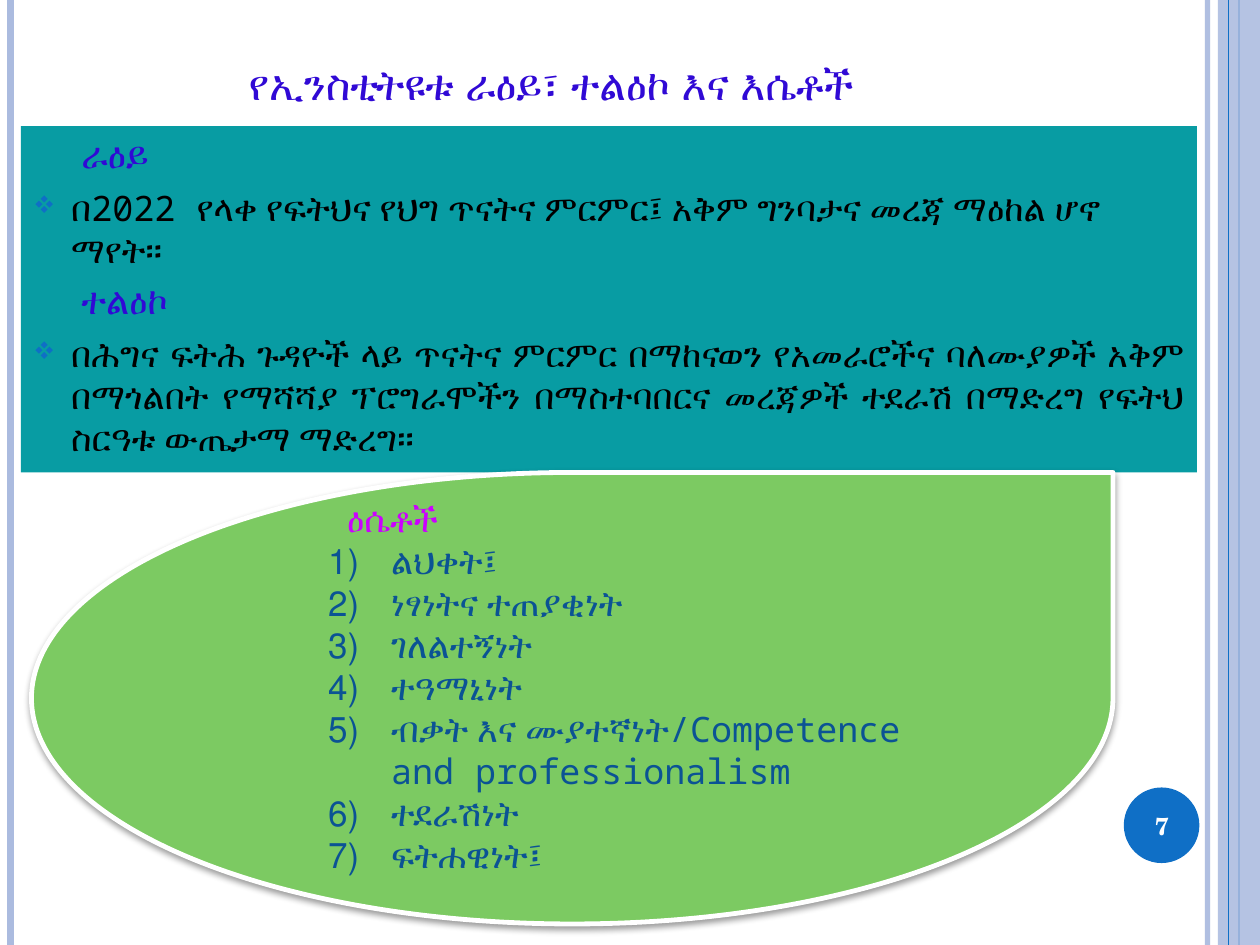
from lxml import etree
from pptx import Presentation
from pptx.dml.color import RGBColor
from pptx.enum.shapes import MSO_CONNECTOR, MSO_SHAPE
from pptx.enum.text import MSO_ANCHOR, PP_ALIGN
from pptx.oxml.ns import qn
from pptx.util import Pt

WIDTH, HEIGHT = 720, 540
STRAIGHT = MSO_CONNECTOR.STRAIGHT
RECTANGLE, OVAL, TEARDROP = MSO_SHAPE.RECTANGLE, MSO_SHAPE.OVAL, MSO_SHAPE.TEAR
TOP, MIDDLE, BOTTOM = MSO_ANCHOR.TOP, MSO_ANCHOR.MIDDLE, MSO_ANCHOR.BOTTOM
LEFT, CENTER, JUSTIFY = PP_ALIGN.LEFT, PP_ALIGN.CENTER, PP_ALIGN.JUSTIFY

WHITE = RGBColor(0xFF, 0xFF, 0xFF)
BLACK = RGBColor(0x00, 0x00, 0x00)
LAVENDER = RGBColor(0xAB, 0xBB, 0xDF)
BLUE = RGBColor(0x0F, 0x6F, 0xC6)
VIOLET = RGBColor(0x30, 0x09, 0xD5)
TEAL = RGBColor(0x08, 0x9C, 0xA3)
GREEN = RGBColor(0x7C, 0xCA, 0x62)
MAGENTA = RGBColor(0xCC, 0x00, 0xFF)
NAVY = RGBColor(0x0B, 0x53, 0x94)

BODY_FONT, NUMBER_FONT = "Noto Sans Mono", "TeX Gyre Schola"
DIAMOND_FONT, LIST_FONT = "Wingdings", "Arial"

TITLE = "የኢንስቲትዩቱ ራዕይ፣ ተልዕኮ እና እሴቶች"
STATEMENTS = [
    ("ራዕይ", "በ2022 የላቀ የፍትህና የህግ ጥናትና ምርምር፤ አቅም ግንባታና መረጃ ማዕከል ሆኖ ማየት፡፡", LEFT),
    ("ተልዕኮ", "በሕግና ፍትሕ ጉዳዮች ላይ ጥናትና ምርምር በማከናወን የአመራሮችና ባለሙያዎች አቅም "
     "በማጎልበት የማሻሻያ ፕሮግራሞችን በማስተባበርና መረጃዎች ተደራሽ በማድረግ የፍትህ ስርዓቱ "
     "ውጤታማ ማድረግ፡፡", JUSTIFY),
]
VALUES_HEADING = "ዕሴቶች"
VALUES = ["ልህቀት፤", "ነፃነትና ተጠያቂነት", "ገለልተኝነት", "ተዓማኒነት",
          "ብቃት እና ሙያተኛነት/Competence and professionalism", "ተደራሽነት", "ፍትሐዊነት፤"]


def add_xml(parent, tag, **attributes):
    return etree.SubElement(parent, qn(tag), attributes)


class SlideBuilder:
    def __init__(self, slide):
        self.slide = slide

    def set_alpha(self, shape, percent):
        """Make the one colour of the shape partly transparent."""
        for color in shape._element.spPr.iter(qn("a:srgbClr")):
            add_xml(color, "a:alpha", val=str(percent * 1000))

    def vertical_line(self, x, width, color):
        line = self.slide.shapes.add_connector(STRAIGHT, Pt(x), Pt(0), Pt(x), Pt(HEIGHT))
        line.line.color.rgb = color
        line.line.width = Pt(width)
        add_xml(line._element.spPr, "a:effectLst")
        return line

    def shape(self, kind, left, top, width, height, fill, outline=None):
        shape = self.slide.shapes.add_shape(kind, Pt(left), Pt(top), Pt(width), Pt(height))
        shape.fill.solid()
        shape.fill.fore_color.rgb = fill
        if outline is None:
            shape.line.fill.background()
        else:
            shape.line.color.rgb = outline
            shape.line.width = Pt(2.75)
        shape.shadow.inherit = False
        return shape

    def drop_shadow(self, shape):
        effects = shape._element.spPr.find(qn("a:effectLst"))
        shadow = add_xml(effects, "a:outerShdw", blurRad=str(Pt(4)), dist=str(Pt(2)),
                         dir="5400000", rotWithShape="0")
        color = add_xml(shadow, "a:srgbClr", val=str(BLACK))
        add_xml(color, "a:alpha", val="40000")

    def text_box(self, left, top, width, height, anchor):
        box = self.slide.shapes.add_textbox(Pt(left), Pt(top), Pt(width), Pt(height))
        return self.text_frame(box, anchor)

    def text_frame(self, shape, anchor):
        frame = shape.text_frame
        frame.word_wrap = True
        frame.vertical_anchor = anchor
        return frame

    def paragraph(self, frame, text, size, color, bold=False, font=BODY_FONT,
                  align=LEFT, margin=0, indent=0, before=0):
        paragraph = frame.paragraphs[0]
        if paragraph.runs:
            paragraph = frame.add_paragraph()
        paragraph.alignment = align
        paragraph.space_before = Pt(before)
        properties = paragraph._p.get_or_add_pPr()
        properties.set("marL", str(Pt(margin)))
        properties.set("indent", str(Pt(indent)))
        run = paragraph.add_run()
        run.text = text
        run.font.size = Pt(size)
        run.font.bold = bold
        run.font.color.rgb = color
        run.font.name = font
        return properties

    def diamond_item(self, frame, text, align):
        properties = self.paragraph(frame, text, 20, BLACK, align=align,
                                    margin=21.6, indent=-21.6, before=6)
        add_xml(add_xml(properties, "a:buClr"), "a:srgbClr", val=str(BLUE))
        add_xml(properties, "a:buSzPct", val="70000")
        add_xml(properties, "a:buFont", typeface=DIAMOND_FONT, pitchFamily="2", charset="2")
        add_xml(properties, "a:buChar", char="v")

    def numbered_item(self, frame, text):
        properties = self.paragraph(frame, text, 20, NAVY, margin=108, indent=-36)
        add_xml(properties, "a:buFont", typeface=LIST_FONT)
        add_xml(properties, "a:buAutoNum", type="arabicParenR")


def main():
    presentation = Presentation()
    presentation.slide_width, presentation.slide_height = Pt(WIDTH), Pt(HEIGHT)
    builder = SlideBuilder(presentation.slides.add_slide(presentation.slide_layouts[6]))

    builder.set_alpha(builder.vertical_line(690, 3, LAVENDER), 93)
    builder.vertical_line(6, 4.5, LAVENDER)
    builder.vertical_line(708, 1.5, BLUE)
    builder.set_alpha(builder.shape(RECTANGLE, 696, 0, 24, HEIGHT, LAVENDER), 87)
    builder.vertical_line(702, 0.75, BLUE)
    builder.shape(OVAL, 642.2, 450, 43.2, 43.2, BLUE)

    title = builder.text_box(102, 21.6, 564, 44.4, BOTTOM)
    builder.paragraph(title, TITLE, 24, VIOLET, bold=True, margin=33)

    panel = builder.shape(RECTANGLE, 12, 72, 672, 198, TEAL)
    statements = builder.text_frame(panel, TOP)
    for heading, statement, align in STATEMENTS:
        builder.paragraph(statements, heading, 21, VIOLET, bold=True, margin=27.4, before=4.2)
        builder.diamond_item(statements, statement, align)

    number = builder.text_box(640, 451.4, 48, 41, MIDDLE)
    builder.paragraph(number, "7", 14, WHITE, bold=True, font=NUMBER_FONT, align=CENTER)

    drop = builder.shape(TEARDROP, 18, 270, 618, 258, GREEN, outline=WHITE)
    builder.drop_shadow(drop)
    values = builder.text_frame(drop, MIDDLE)
    values.margin_bottom = Pt(16.6)
    builder.paragraph(values, VALUES_HEADING, 20, MAGENTA, bold=True, margin=82.8)
    for value in VALUES:
        builder.numbered_item(values, value)

    presentation.save("out.pptx")


if __name__ == "__main__":
    main()
